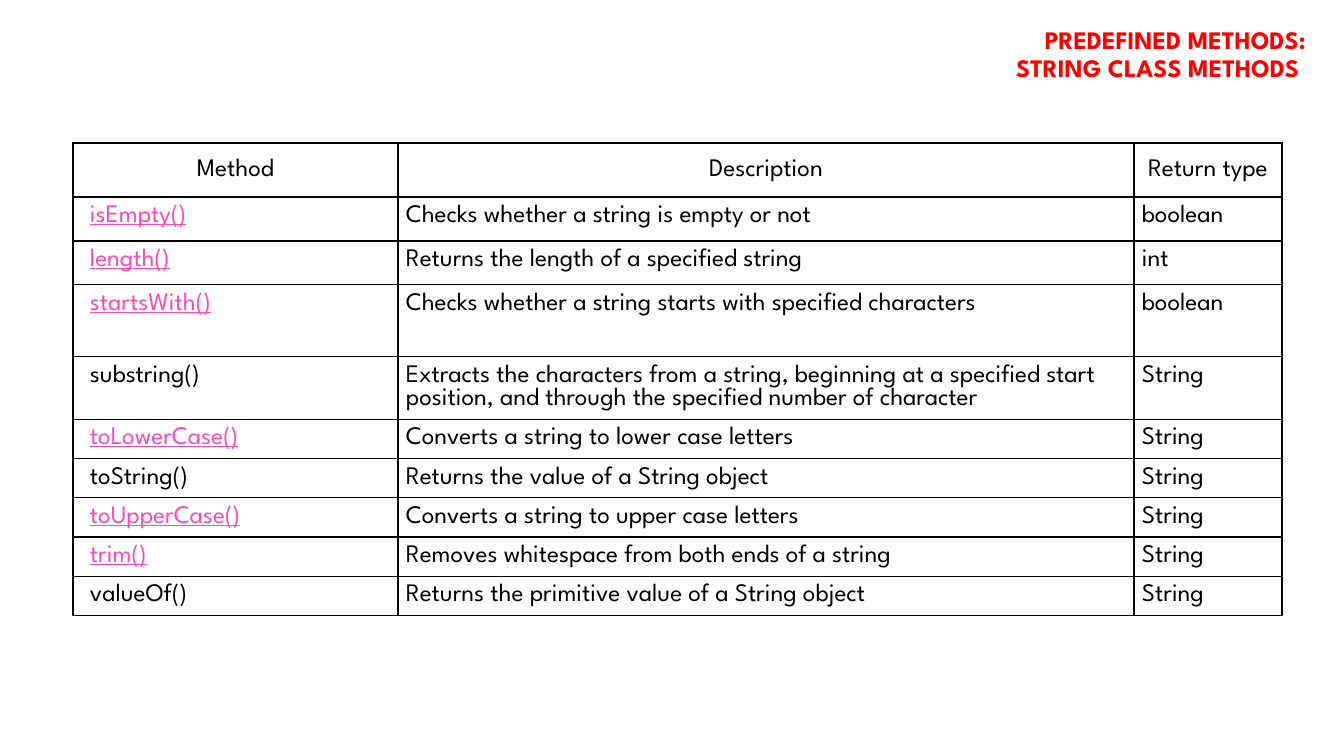
"""Build a slide that lists the predefined methods of the String class."""
from lxml import etree
from pptx import Presentation
from pptx.dml.color import RGBColor
from pptx.enum.text import MSO_ANCHOR, MSO_AUTO_SIZE, PP_ALIGN
from pptx.oxml.ns import qn
from pptx.util import Emu, Pt

MIDDLE, TOP = MSO_ANCHOR.MIDDLE, MSO_ANCHOR.TOP
NO_FIT = MSO_AUTO_SIZE.NONE
LEFT, CENTER, RIGHT = PP_ALIGN.LEFT, PP_ALIGN.CENTER, PP_ALIGN.RIGHT

BLACK = RGBColor(0x00, 0x00, 0x00)
RED = RGBColor(0xFF, 0x00, 0x00)
PINK = RGBColor(0xFB, 0x4A, 0xB6)
FONT = "League Spartan"
SCALE = 914400 / 100.8

TITLE = ["PREDEFINED METHODS:", "STRING CLASS METHODS "]
HEAD = ["Method", "Description", "Return type"]
METHODS = [
    ("isEmpty()", "Checks whether a string is empty or not", "boolean"),
    ("length()", "Returns the length of a specified string", "int"),
    ("startsWith()", "Checks whether a string starts with specified characters",
     "boolean"),
    ("substring()", "Extracts the characters from a string, beginning at a "
     "specified start position, and through the specified number of character",
     "String"),
    ("toLowerCase()", "Converts a string to lower case letters", "String"),
    ("toString()", "Returns the value of a String object", "String"),
    ("toUpperCase()", "Converts a string to upper case letters", "String"),
    ("trim()", "Removes whitespace from both ends of a string", "String"),
    ("valueOf()", "Returns the primitive value of a String object", "String"),
]
PLAIN = {"substring()", "toString()", "valueOf()"}
WIDTHS = [325, 736, 148]
HEIGHTS = [54, 44, 44, 72] + [37] * 6


def px(count):
    """Turn pixels into EMU."""
    return Emu(round(count * SCALE))


def add_run(para, text, color=BLACK, bold=False, line=False):
    """Add one styled run to a paragraph."""
    run = para.add_run()
    run.text = text
    font = run.font
    font.name, font.size = FONT, Pt(18)
    font.bold, font.underline = bold, line
    font.color.rgb = color


def add_title(slide):
    """Move the title placeholder to the top right and fill it."""
    title = slide.shapes.title
    title.left, title.top = px(431), px(13)
    title.width, title.height = px(885), px(84)
    frame = title.text_frame
    frame.word_wrap, frame.auto_size = True, NO_FIT
    frame.vertical_anchor = MIDDLE
    para = frame.paragraphs[0]
    para.alignment, para.line_spacing = RIGHT, Pt(20)
    for row, text in enumerate(TITLE):
        if row:
            para.add_line_break()
        add_run(para, text, RED, bold=True)


def add_border(cell):
    """Draw a thin black line on each side of a cell."""
    props = cell._tc.get_or_add_tcPr()
    for side in ("a:lnL", "a:lnR", "a:lnT", "a:lnB"):
        line = etree.SubElement(props, qn(side), w=str(Pt(1)))
        fill = etree.SubElement(line, qn("a:solidFill"))
        etree.SubElement(fill, qn("a:srgbClr"), val=str(BLACK))


def fill_cell(cell, text, head, first):
    """Write and format one table cell."""
    add_border(cell)
    cell.fill.background()
    cell.vertical_anchor = MIDDLE if head else TOP
    if not head:
        cell.margin_left = px(17 if first else 8)
        cell.margin_right = cell.margin_top = cell.margin_bottom = px(8)
    para = cell.text_frame.paragraphs[0]
    para.alignment = CENTER if head else LEFT
    link = first and not head and text not in PLAIN
    add_run(para, text, PINK if link else BLACK, line=link)


def add_grid(slide):
    """Add the table of methods."""
    rows = [HEAD, *METHODS]
    frame = slide.shapes.add_table(len(rows), len(HEAD), px(73), px(143),
                                   px(sum(WIDTHS)), px(sum(HEIGHTS)))
    table = frame.table
    table.first_row = table.horz_banding = False
    for col, width in zip(table.columns, WIDTHS):
        col.width = px(width)
    for row, height in zip(table.rows, HEIGHTS):
        row.height = px(height)
    for r, row in enumerate(rows):
        for c, text in enumerate(row):
            fill_cell(table.cell(r, c), text, r == 0, c == 0)


def main():
    """Build and save the slide."""
    deck = Presentation()
    deck.slide_width, deck.slide_height = px(1344), px(756)
    slide = deck.slides.add_slide(deck.slide_layouts[5])
    add_grid(slide)
    add_title(slide)
    deck.save("out.pptx")


if __name__ == "__main__":
    main()
